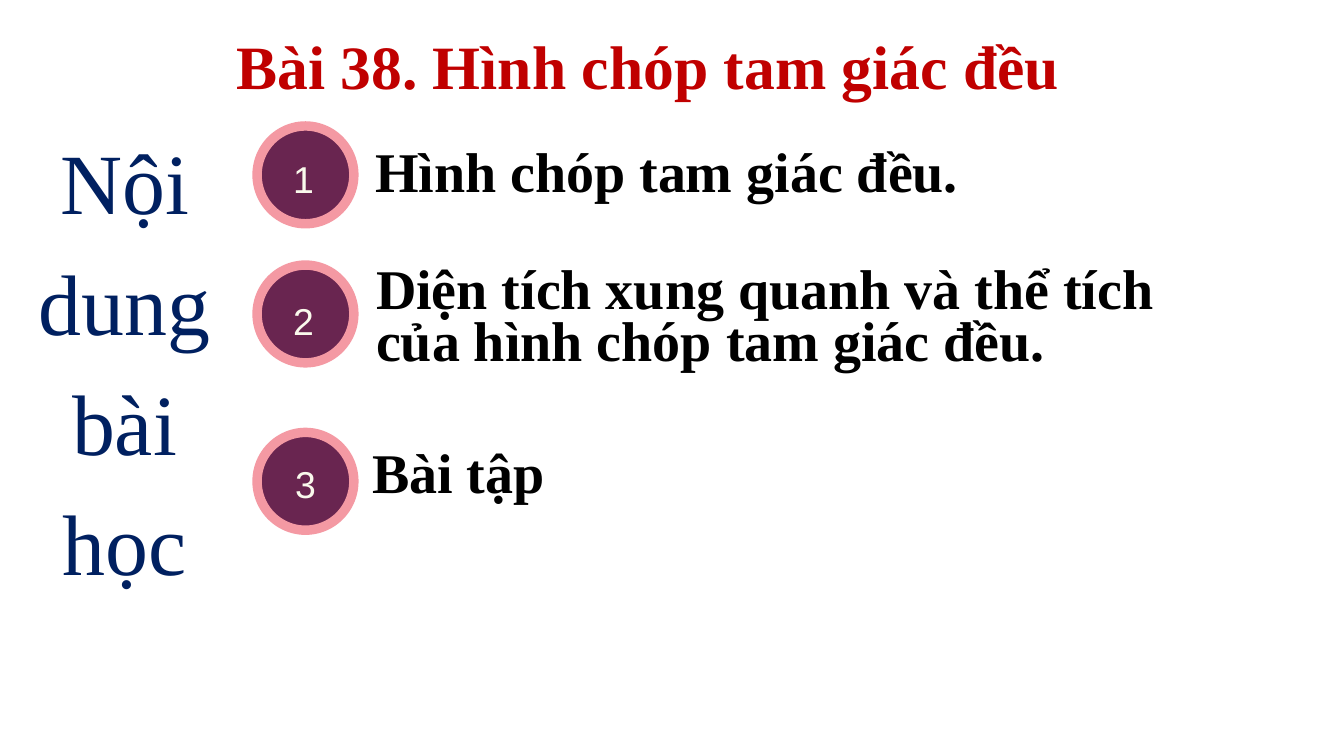
"""Build the lesson outline slide for triangular pyramids."""
from dataclasses import dataclass

from pptx import Presentation
from pptx.dml.color import RGBColor
from pptx.enum.shapes import MSO_SHAPE
from pptx.enum.text import MSO_ANCHOR, MSO_AUTO_SIZE, PP_ALIGN
from pptx.util import Inches, Pt

OVAL = MSO_SHAPE.OVAL
TOP = MSO_ANCHOR.TOP
NO_AUTOFIT = MSO_AUTO_SIZE.NONE
LEFT, CENTER = PP_ALIGN.LEFT, PP_ALIGN.CENTER


@dataclass(frozen=True)
class Theme:
    serif: str = "Times New Roman"
    sans: str = "Arial"
    title_color: RGBColor = RGBColor(0xC0, 0x00, 0x00)
    heading_color: RGBColor = RGBColor(0x00, 0x20, 0x60)
    item_color: RGBColor = RGBColor(0x00, 0x00, 0x00)
    number_color: RGBColor = RGBColor(0xFA, 0xF9, 0xEC)
    circle_fill: RGBColor = RGBColor(0x69, 0x25, 0x50)
    circle_line: RGBColor = RGBColor(0xF4, 0x99, 0xA3)
    title_size: float = 44
    heading_size: float = 61.3
    item_size: float = 40
    number_size: float = 26.7
    heading_spacing: float = 85.9
    item_spacing: float = 37.3


THEME = Theme()


def write(shape, text, font_name, size, color, bold=False, align=LEFT, spacing=None, inset=0):
    """Fill a shape with one formatted paragraph."""
    frame = shape.text_frame
    frame.word_wrap = True
    frame.auto_size = NO_AUTOFIT
    frame.vertical_anchor = TOP
    frame.margin_left = frame.margin_right = Inches(inset)
    frame.margin_top = frame.margin_bottom = Inches(inset / 2)
    paragraph = frame.paragraphs[0]
    paragraph.alignment = align
    if spacing:
        paragraph.line_spacing = Pt(spacing)
    run = paragraph.add_run()
    run.text = text
    run.font.name = font_name
    run.font.size = Pt(size)
    run.font.bold = bold
    run.font.color.rgb = color


presentation = Presentation()
presentation.slide_width = Inches(13.33)
presentation.slide_height = Inches(7.5)
slide = presentation.slides.add_slide(presentation.slide_layouts[5])

title = slide.shapes.title
title.left, title.top = Inches(2.14), Inches(0.23)
title.width, title.height = Inches(8.58), Inches(0.84)
write(title, "Bài 38. Hình chóp tam giác đều", THEME.serif, THEME.title_size,
      THEME.title_color, bold=True, align=CENTER, inset=0.1)

heading = slide.shapes.add_textbox(Inches(0.27), Inches(1.11), Inches(1.93), Inches(4.82))
write(heading, "Nội dung bài học", THEME.serif, THEME.heading_size,
      THEME.heading_color, align=CENTER, spacing=THEME.heading_spacing)

items = [
    ("Hình chóp tam giác đều.", (3.72, 1.5, 6.19, 0.52), 1.25, (2.84, 1.48)),
    ("Diện tích xung quanh và thể tích của hình chóp tam giác đều.",
     (3.73, 2.66, 8.22, 1.04), 2.63, (2.84, 2.88)),
    ("Bài tập", (3.69, 4.49, 2.72, 0.52), 4.29, (2.86, 4.5)),
]
for number, (text, item_box, circle_top, number_corner) in enumerate(items, start=1):
    item = slide.shapes.add_textbox(*map(Inches, item_box))
    write(item, text, THEME.serif, THEME.item_size, THEME.item_color,
          bold=True, spacing=THEME.item_spacing)

    badge = slide.shapes.add_group_shape()
    circle = badge.shapes.add_shape(
        OVAL, Inches(2.55), Inches(circle_top), Inches(0.96), Inches(0.97))
    circle.shadow.inherit = False
    circle.fill.solid()
    circle.fill.fore_color.rgb = THEME.circle_fill
    circle.line.color.rgb = THEME.circle_line
    circle.line.width = Pt(6.75)

    label = badge.shapes.add_textbox(*map(Inches, number_corner), Inches(0.34), Inches(0.47))
    write(label, str(number), THEME.sans, THEME.number_size, THEME.number_color,
          align=CENTER, spacing=THEME.item_spacing)

presentation.save("out.pptx")
